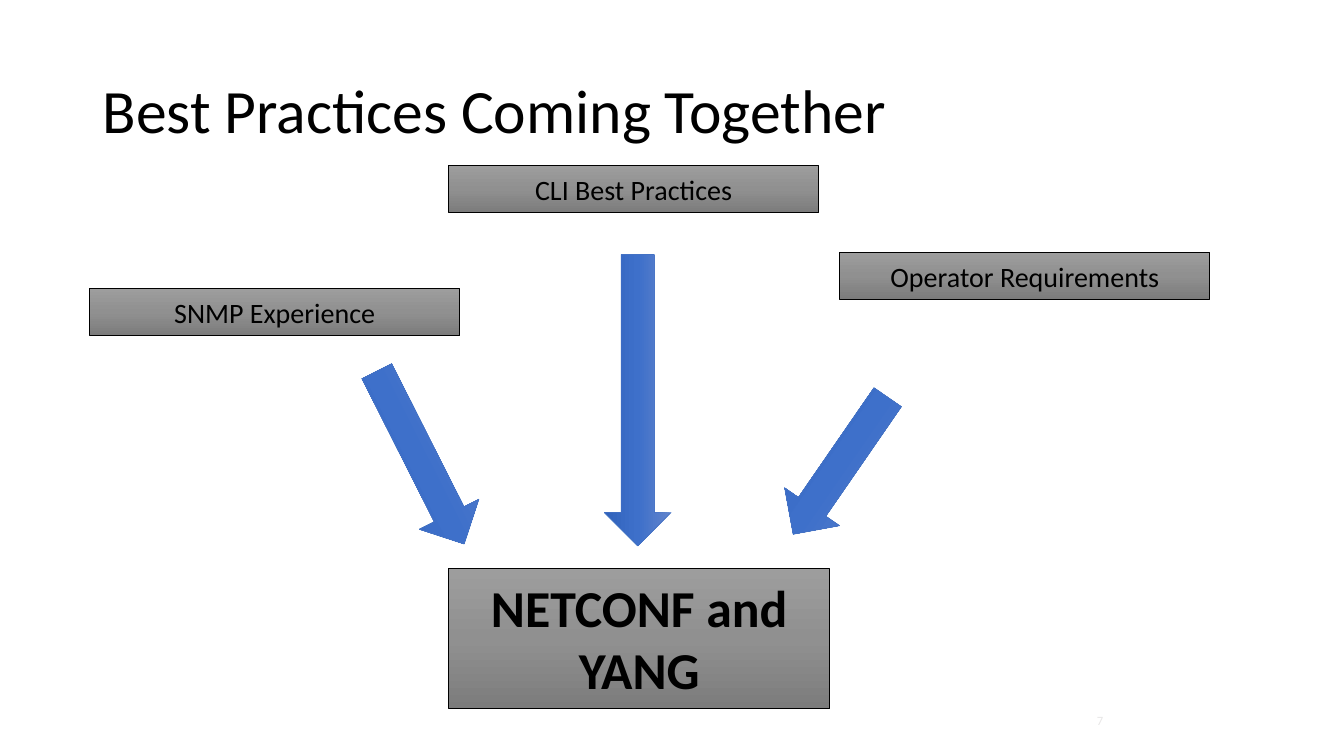
"""Build the slide on best practices that lead to NETCONF and YANG."""
from copy import deepcopy
from pptx import Presentation
from pptx.dml.color import RGBColor
from pptx.enum.shapes import MSO_SHAPE as Kind
from pptx.enum.text import MSO_ANCHOR as Anchor, MSO_AUTO_SIZE as Auto, PP_ALIGN as Align
from pptx.oxml.ns import qn
from pptx.util import Inches, Pt

GRAYS = ["9D9D9D", "909090", "7C7C7C"]
BLUES = ["6183CB", "3E70CA", "3062BB"]


def paint(color, tone):
    color.rgb = RGBColor.from_string(tone)


def write(shape, text, size, tone, frame, align=Align.LEFT, bold=False, space=1.0):
    body = shape.text_frame
    for name, value in {"word_wrap": True, **frame}.items():
        setattr(body, name, value)
    para = body.paragraphs[0]
    para.alignment, para.line_spacing = align, space
    run = para.add_run()
    run.text = text
    for name, value in {"name": "Calibri", "size": Pt(size), "bold": bold}.items():
        setattr(run.font, name, value)
    paint(run.font.color, tone)


deck = Presentation()
deck.slide_width, deck.slide_height = Inches(13.33), Inches(7.5)
slide = deck.slides.add_slide(deck.slide_layouts[6])
shapes = slide.shapes

title = shapes.add_textbox(Inches(0.92), Inches(0.4), Inches(11.5), Inches(1.45))
write(title, "Best Practices Coming Together", 44, "000000",
      {"vertical_anchor": Anchor.MIDDLE}, space=0.9)

inset = {"margin_left": Inches(0.13), "margin_right": Inches(0.13),
         "margin_top": Inches(0.07), "margin_bottom": Inches(0.07),
         "vertical_anchor": Anchor.TOP, "auto_size": Auto.SHAPE_TO_FIT_TEXT}
boxes = [
    ("SNMP Experience", 0.89, 2.86, 3.67, 0.47, 20, False),
    ("CLI Best Practices", 4.45, 1.64, 3.67, 0.47, 20, False),
    ("Operator Requirements", 8.33, 2.5, 3.67, 0.47, 20, False),
    ("NETCONF and YANG", 4.45, 5.64, 3.78, 1.39, 37, True),
]
arrows = [(3.21, 4.21, 1.92, 63.2), (4.88, 3.64, 2.89, 90), (7.51, 4.29, 1.65, 124.6)]

drawn = []
for text, left, top, wide, high, size, bold in boxes:
    box = shapes.add_shape(Kind.RECTANGLE, Inches(left), Inches(top), Inches(wide), Inches(high))
    write(box, text, size, "000000", inset, Align.CENTER, bold)
    drawn.append((box, GRAYS, "000000"))

for left, top, wide, turn in arrows:
    arrow = shapes.add_shape(Kind.RIGHT_ARROW, Inches(left), Inches(top), Inches(wide), Inches(0.66))
    arrow.rotation = turn
    drawn.append((arrow, BLUES, "4472C4"))

for shape, tones, edge in drawn:
    shape.shadow.inherit = False
    shape.line.width = Pt(0.5)
    paint(shape.line.color, edge)
    shape.fill.gradient()
    shape.fill.gradient_angle = 270
    stops = shape._element.spPr.find(qn("a:gradFill")).find(qn("a:gsLst"))
    stops.insert(1, deepcopy(stops[0]))
    for stop, tone, place in zip(shape.fill.gradient_stops, tones, (0, 0.5, 1)):
        stop.position = place
        paint(stop.color, tone)

number = shapes.add_textbox(Inches(10.41), Inches(6.95), Inches(1), Inches(0.4))
write(number, "7", 9, "E7E6E6", {"vertical_anchor": Anchor.MIDDLE}, Align.CENTER)

deck.save("out.pptx")
